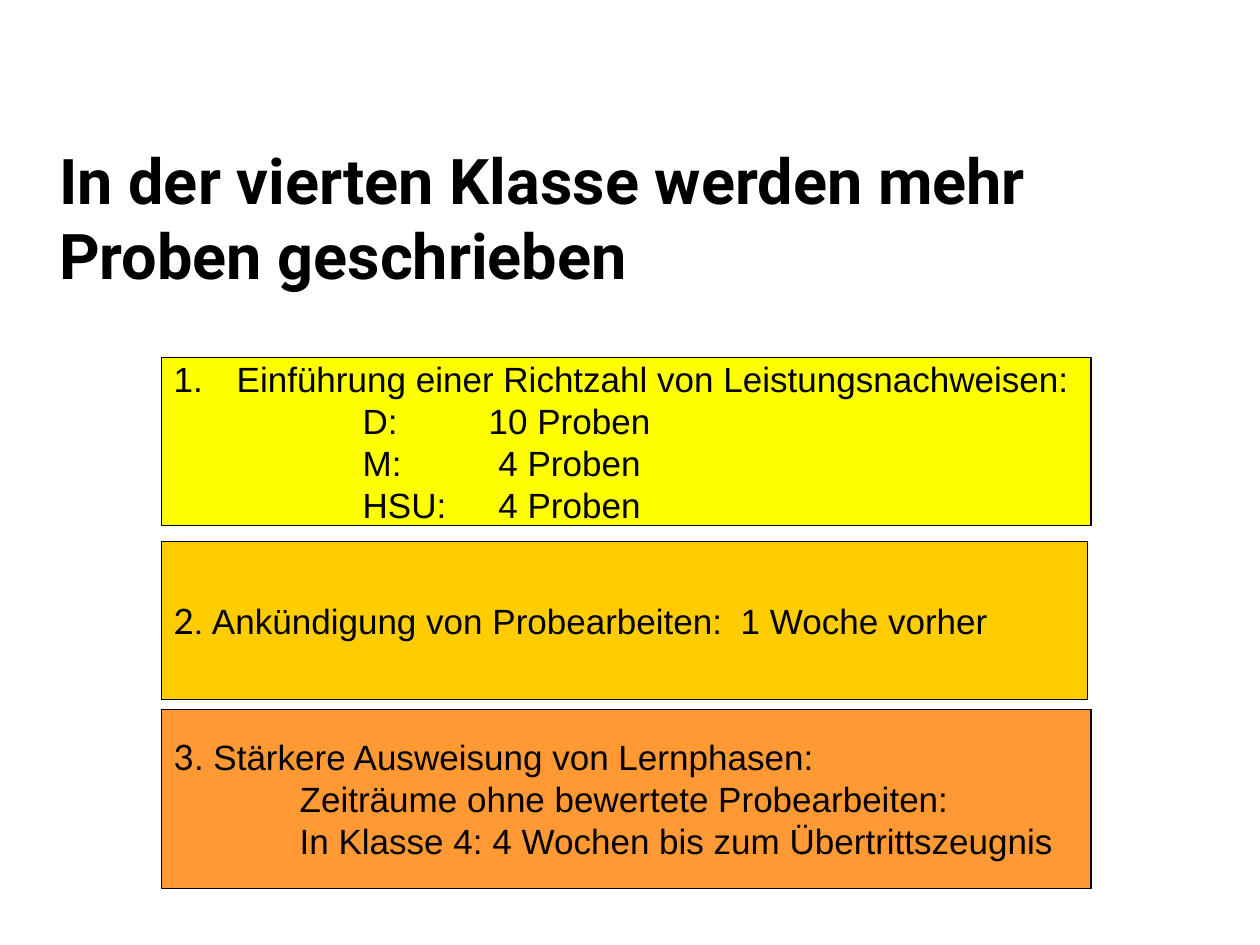
from dataclasses import dataclass

from lxml.etree import SubElement
from pptx import Presentation
from pptx.dml.color import RGBColor as Color
from pptx.enum.shapes import MSO_SHAPE as Preset
from pptx.enum.text import MSO_ANCHOR as Anchor, PP_ALIGN as Align
from pptx.oxml.ns import qn
from pptx.util import Inches, Pt


@dataclass(frozen=True)
class Theme:
    ink: Color = Color(0x00, 0x00, 0x00)
    paper: Color = Color(0xFF, 0xFF, 0xFF)
    yellow: Color = Color(0xFF, 0xFF, 0x00)
    gold: Color = Color(0xFF, 0xCC, 0x00)
    orange: Color = Color(0xFF, 0x99, 0x33)
    title_font: str = "Roboto"
    body_font: str = "Arial"
    digit_font: str = "Lato"
    title_size: Pt = Pt(36)
    body_size: Pt = Pt(20)
    border: Pt = Pt(0.75)


@dataclass(frozen=True)
class Span:
    text: str
    font: str


@dataclass(frozen=True)
class Line:
    spans: tuple[Span, ...]
    hanging: bool = False
    numbered: bool = False


@dataclass(frozen=True)
class Panel:
    top: float
    width: float
    height: float
    fill: Color
    lines: tuple[Line, ...]


THEME = Theme()
PANEL_LEFT = 1.28
HANG = Inches(0.5)
TAB_STEP = Inches(1)


def body(text: str) -> Span:
    return Span(text, THEME.body_font)


def digit(text: str) -> Span:
    return Span(text, THEME.digit_font)


QUOTAS = ("D: \t10 Proben", "M: \t 4 Proben", "HSU: \t 4 Proben")

PANELS = (
    Panel(2.84, 7.38, 1.33, THEME.yellow, (
        Line((body("Einführung einer Richtzahl von Leistungsnachweisen:"),), True, True),
        *(Line((body("\t\t" + quota),), True) for quota in QUOTAS),
    )),
    Panel(4.3, 7.35, 1.25, THEME.gold, (
        Line((digit("2"), Span(". ", THEME.title_font),
              body("Ankündigung von Probearbeiten: \t1 Woche vorher")), True),
    )),
    Panel(5.63, 7.38, 1.42, THEME.orange, (
        Line((digit("3"), body(". Stärkere Ausweisung von Lernphasen:"))),
        Line((body("\tZeiträume ohne bewertete Probearbeiten:"),)),
        Line((body("\tIn Klasse 4: 4 Wochen bis zum Übertrittszeugnis"),)),
    )),
)


def add_span(para, span: Span, size: Pt, bold: bool = False) -> None:
    run = para.add_run()
    run.text = span.text
    run.font.name = span.font
    run.font.size = size
    run.font.bold = bold
    run.font.color.rgb = THEME.ink


def add_box(page, left: float, top: float, width: float, height: float, fill: Color):
    box = page.shapes.add_shape(
        Preset.RECTANGLE, Inches(left), Inches(top), Inches(width), Inches(height))
    box.shadow.inherit = False
    box.fill.solid()
    box.fill.fore_color.rgb = fill
    box.text_frame.word_wrap = True
    box.text_frame.vertical_anchor = Anchor.MIDDLE
    return box


def add_title(page, lines: tuple[str, ...]) -> None:
    box = add_box(page, 0, 0.72, 9.69, 2, THEME.paper)
    box.line.fill.background()
    box.text_frame.margin_left = Inches(0.47)
    para = box.text_frame.paragraphs[0]
    para.alignment = Align.LEFT
    for index, text in enumerate(lines):
        if index:
            para.add_line_break()
        add_span(para, Span(text, THEME.title_font), THEME.title_size, True)


def add_panel(page, panel: Panel) -> None:
    box = add_box(page, PANEL_LEFT, panel.top, panel.width, panel.height, panel.fill)
    box.line.color.rgb = THEME.ink
    box.line.width = THEME.border
    frame = box.text_frame
    for index, line in enumerate(panel.lines):
        para = frame.add_paragraph() if index else frame.paragraphs[0]
        para.alignment = Align.LEFT
        properties = para._p.get_or_add_pPr()
        properties.set("defTabSz", str(TAB_STEP))
        if line.hanging:
            properties.set("marL", str(HANG))
            properties.set("indent", str(-HANG))
        if line.numbered:
            SubElement(properties, qn("a:buFont"), typeface=THEME.body_font)
            SubElement(properties, qn("a:buAutoNum"), type="arabicPeriod")
        for span in line.spans:
            add_span(para, span, THEME.body_size)


def main() -> None:
    deck = Presentation()
    deck.slide_width, deck.slide_height = Inches(10), Inches(7.5)
    page = deck.slides.add_slide(deck.slide_layouts[6])
    add_title(page, ("In der vierten Klasse werden mehr", "Proben geschrieben"))
    for panel in PANELS:
        add_panel(page, panel)
    deck.save("out.pptx")


if __name__ == "__main__":
    main()
